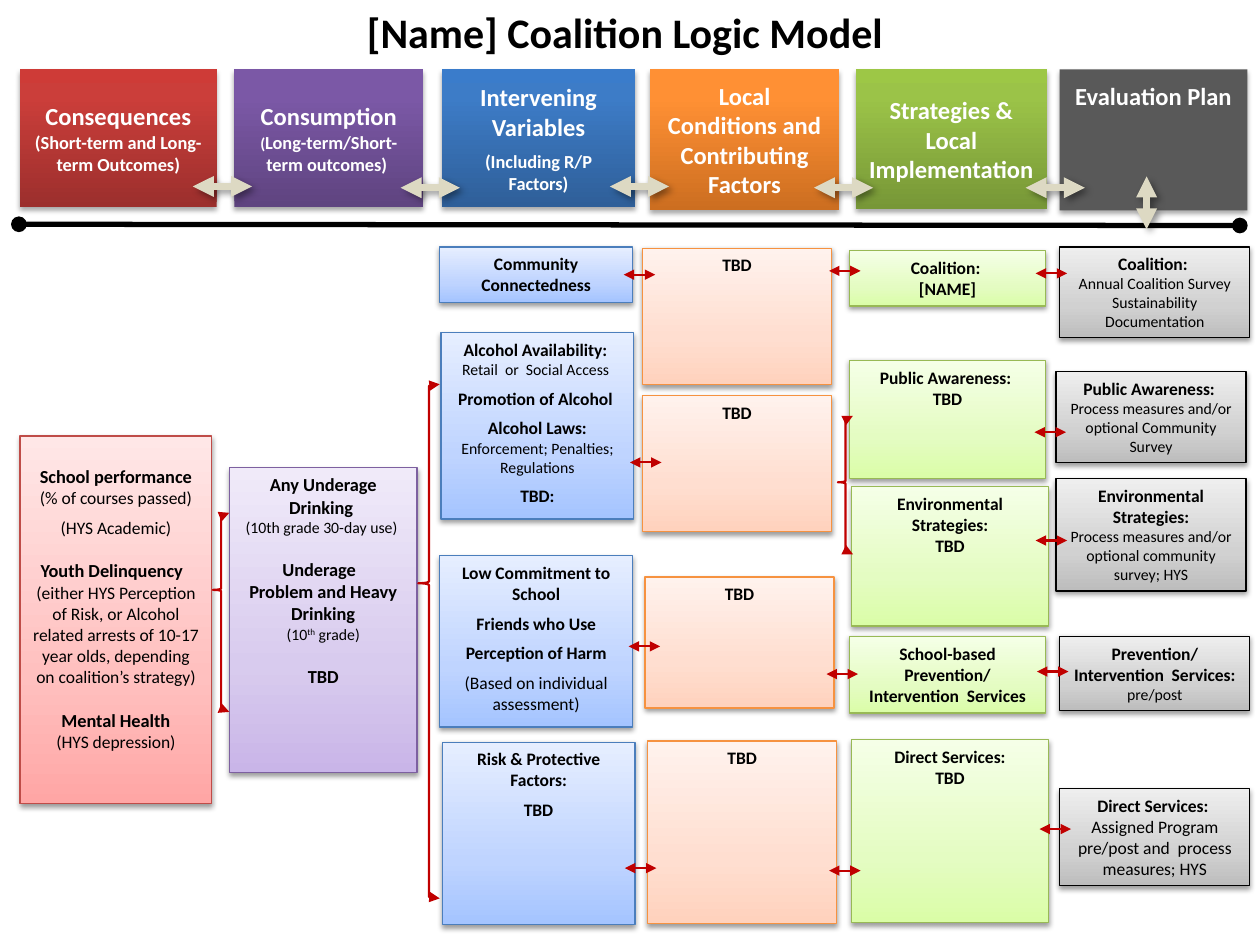
from lxml import etree
from pptx import Presentation
from pptx.dml.color import RGBColor
from pptx.enum.shapes import MSO_CONNECTOR, MSO_SHAPE
from pptx.enum.text import MSO_ANCHOR, PP_ALIGN
from pptx.oxml.ns import qn
from pptx.util import Inches, Pt

RECTANGLE, BRACE = MSO_SHAPE.RECTANGLE, MSO_SHAPE.LEFT_BRACE
STRAIGHT = MSO_CONNECTOR.STRAIGHT
TOP, MIDDLE = MSO_ANCHOR.TOP, MSO_ANCHOR.MIDDLE
CENTER = PP_ALIGN.CENTER
FONT = "Calibri"
RED, SAND = "C00000", "DDD9C3"
SMALL_GAP, BLANK_LINE = 5, 12.5  # points before a paragraph

# Shadows: opacity %, blur pt, distance pt, direction in degrees
HEADER_SHADOW, BOX_SHADOW, ARROW_SHADOW = (35, 3.1, 1.8, 90), (38, 3.1, 1.6, 90), (40, 4, 3, 45)


def bold(text, size=10.0):
    return text, size, True


def plain(text, size=9.0):
    return text, size, False


def para(*runs, gap=0.0):
    return gap, runs


# Headers: left, width, height, gradient colours (bottom to top), paragraphs
HEADERS = [
    (0.16, 1.56, 1.09, ("9C2F2D", "CB3E3A", "CE3B37"),
     [para(bold("Consequences", 14), bold(" ", 11), bold("(Short-term and Long-term Outcomes)", 10.5))]),
    (1.86, 1.5, 1.09, ("5F4480", "7B58A6", "7C57A8"),
     [para(bold("Consumption", 14)), para(bold("(", 9), bold("Long-term/Short-term outcomes) ", 10.5))]),
    (3.51, 1.53, 1.09, ("2F5F99", "3D7CC7", "3A7CCB"),
     [para(bold("Intervening Variables", 14)), para(bold("(Including R/P Factors)", 10.5), gap=SMALL_GAP)]),
    (5.16, 1.5, 1.12, ("CC6E20", "FF9034", "FF9136"),
     [para(bold("Local Conditions and Contributing Factors", 14))]),
    (6.79, 1.52, 1.11, ("779737", "9BC348", "9DC746"),
     [para(bold("Strategies &", 14)), para(bold("Local Implementation", 14))]),
    (8.41, 1.49, 1.12, ("595959",), [para(bold("Evaluation Plan", 14))]),
]
HEADER_TOP = 0.55

TBD = para(bold("TBD"))
# Columns: left, width, gradient, line colour, boxes (shift right, top, height, paragraphs)
COLUMNS = [
    (0.16, 1.52, ("FFA6A5", "FFC0BF", "FFE7E7"), "BF4C48", [
        (0, 3.46, 2.92, [
            para(bold("School performance ", 10.5), plain("(% of courses passed)", 10)),
            para(plain("(HYS Academic)", 10), gap=SMALL_GAP),
            para(bold("Youth Delinquency  ", 10.5), gap=BLANK_LINE),
            para(plain("(either HYS Perception of Risk, or Alcohol related arrests of 10-17 "
                       "year olds, depending on coalition’s strategy)", 10)),
            para(bold("Mental Health", 10.5), gap=BLANK_LINE),
            para(plain("(HYS depression)", 10))])]),
    (1.82, 1.49, ("C9B5E8", "D8CBEE", "F0EAF9"), "7D60A0", [
        (0, 3.71, 2.42, [
            para(bold("Any Underage Drinking ", 10.5)),
            para(plain("(10th grade 30-day use) ")),
            para(bold("Underage  ", 10.5), gap=BLANK_LINE),
            para(bold("Problem and Heavy Drinking", 10.5)),
            para(plain("(10"), plain("th") + ("super",), plain(" grade)")),
            para(bold("TBD", 10.5), gap=BLANK_LINE)])]),
    (3.49, 1.53, ("A4C4FF", "BFD4FF", "E6EEFF"), "4B7EBC", [
        (0, 1.96, 0.44, [para(bold("Community Connectedness"))]),
        (0.01, 2.64, 1.48, [
            para(bold("Alcohol Availability:  "), plain("Retail  or  Social Access ")),
            para(bold("Promotion of Alcohol "), gap=SMALL_GAP),
            para(bold("Alcohol Laws: "), plain("Enforcement; Penalties; Regulations"), gap=SMALL_GAP),
            para(bold("TBD:"), gap=SMALL_GAP)]),
        (0, 4.41, 1.36, [
            para(bold("Low Commitment to School")),
            para(bold("Friends who Use"), gap=SMALL_GAP),
            para(bold("Perception of Harm"), gap=SMALL_GAP),
            para(plain("(Based on individual assessment)", 10), gap=SMALL_GAP)]),
        (0.02, 5.89, 1.45, [para(bold("Risk & Protective Factors:")), para(bold("TBD"), gap=SMALL_GAP)])]),
    (5.1, 1.5, ("FFD2BD", "FFDED0", "FFF2ED"), "F69240", [
        (0, 1.97, 1.08, [TBD]), (0, 3.14, 1.08, [TBD]),
        (0.02, 4.58, 1.04, [TBD]), (0.04, 5.88, 1.45, [TBD])]),
    (6.74, 1.56, ("DAFDA7", "E4FCC2", "F5FFE7"), "98B955", [
        (0, 1.99, 0.44, [para(bold("Coalition: ")), para(bold("[NAME]"))]),
        (0, 2.86, 0.94, [para(bold("Public Awareness: ")), TBD]),
        (0.02, 3.86, 1.11, [para(bold("Environmental Strategies:")), TBD]),
        (0, 5.05, 0.61, [para(bold("School-based Prevention/ Intervention  Services"))]),
        (0.02, 5.87, 1.45, [para(bold("Direct Services:")), TBD])]),
    (8.38, 1.51, ("BDBDBD", "D1D1D1", "EEEEEE"), "000000", [
        (0.03, 1.96, 0.72, [para(bold("Coalition: ")), para(plain("Annual Coalition Survey")),
                            para(plain("Sustainability Documentation"))]),
        (0, 2.95, 0.72, [para(bold("Public Awareness: ")),
                         para(plain("Process measures and/or optional Community Survey"))]),
        (0, 3.8, 0.89, [para(bold("Environmental Strategies:")),
                        para(plain("Process measures and/or optional community survey; HYS"))]),
        (0.03, 5.05, 0.59, [para(bold("Prevention/ Intervention  Services: "), plain("pre/post"))]),
        (0.03, 6.26, 0.77, [para(bold("Direct Services:  "),
                                 plain("Assigned Program pre/post and  process measures; HYS", 10))])]),
]

# Braces: left, top, width, height, position of the point
BRACES = [(1.69, 4.07, 0.13, 1.58, 0.387), (3.32, 3.05, 0.17, 4.08, 0.387), (6.65, 3.3, 0.12, 1.1, 0.48)]

# Double arrows: left end and height
BOX_ARROWS = [(4.95, 2.18), (5, 3.67), (4.99, 5.13), (4.96, 6.89),
              (6.58, 2.15), (6.56, 5.35), (6.58, 6.91),
              (8.22, 2.17), (8.21, 3.43), (8.22, 4.29), (8.23, 5.33), (8.25, 6.58)]
HEADER_ARROWS = [(1.53, 1.48), (3.18, 1.49), (4.84, 1.48), (6.46, 1.49), (8.14, 1.49)]
BOX_ARROW_LENGTH, HEADER_ARROW_LENGTH = 0.25, 0.47


def color(value):
    return RGBColor.from_string(value)


def add_color(parent, value):
    return etree.SubElement(parent, qn("a:srgbClr"), val=value)


def fill_gradient(shape, colors, middle):
    shape.fill.gradient()
    shape.fill.gradient_angle = 90
    stops = shape._element.spPr.find(qn("a:gradFill")).find(qn("a:gsLst"))
    stops.clear()
    for position, value in zip((0, middle, 100), colors):
        add_color(etree.SubElement(stops, qn("a:gs"), pos=str(position * 1000)), value)


def set_shadow(shape, shadow=None):
    properties = shape._element.spPr
    effects = properties.find(qn("a:effectLst"))
    if effects is None:
        effects = etree.SubElement(properties, qn("a:effectLst"))
    if shadow:
        opacity, blur, distance, direction = shadow
        outer = etree.SubElement(effects, qn("a:outerShdw"), blurRad=str(Pt(blur)), dist=str(Pt(distance)),
                                 dir=str(direction * 60000), rotWithShape="0")
        etree.SubElement(add_color(outer, "000000"), qn("a:alpha"), val=str(opacity * 1000))


def set_line(shape, value, width, end):
    shape.line.color.rgb = color(value)
    shape.line.width = Pt(width)
    for tag in ("a:headEnd", "a:tailEnd"):
        etree.SubElement(shape.line._ln, qn(tag), type=end)


def write(shape, paragraphs, value, anchor=TOP):
    frame = shape.text_frame
    frame.word_wrap = True
    frame.vertical_anchor = anchor
    for index, (gap, runs) in enumerate(paragraphs):
        paragraph = frame.paragraphs[0] if index == 0 else frame.add_paragraph()
        paragraph.alignment = CENTER
        paragraph.space_before = Pt(gap)
        paragraph.font.name = FONT
        for text, size, heavy, *raised in runs:
            span = paragraph.add_run()
            span.text = text
            span.font.name, span.font.size, span.font.bold = FONT, Pt(size), heavy
            span.font.color.rgb = color(value)
            if raised:
                span._r.get_or_add_rPr().set("baseline", "30000")


def add_shape(kind, *place):
    shape = slide.shapes.add_shape(kind, *map(Inches, place))
    shape.shadow.inherit = False
    return shape


def add_line(x1, y1, x2, y2, value, width, end="triangle", shadow=None):
    line = slide.shapes.add_connector(STRAIGHT, *map(Inches, (x1, y1, x2, y2)))
    set_line(line, value, width, end)
    set_shadow(line, shadow)


deck = Presentation()
deck.slide_width, deck.slide_height = Inches(10), Inches(7.5)
slide = deck.slides.add_slide(deck.slide_layouts[6])

# Title
title = slide.shapes.add_textbox(*map(Inches, (0.5, 0, 8.92, 0.5)))
write(title, [para(bold("[Name] Coalition Logic Model", 24))], "000000")

# Header row and the line below it
for left, width, height, colors, paragraphs in HEADERS:
    header = add_shape(RECTANGLE, left, HEADER_TOP, width, height)
    header.line.fill.background()
    set_shadow(header, HEADER_SHADOW)
    if len(colors) > 1:
        fill_gradient(header, colors, 80)
        write(header, paragraphs, "FFFFFF", MIDDLE)
    else:
        header.fill.solid()
        header.fill.fore_color.rgb = color(colors[0])
        header.text_frame.margin_top = Inches(0.09)
        write(header, paragraphs, "FFFFFF")
add_line(0.15, 1.78, 9.84, 1.79, "000000", 3, "oval")

# Boxes, column by column
for column, (left, width, colors, outline, boxes) in enumerate(COLUMNS):
    for shift, top, height, paragraphs in boxes:
        box = add_shape(RECTANGLE, left + shift, top, width, height)
        fill_gradient(box, colors, 35)
        box.line.color.rgb = color(outline)
        box.line.width = Pt(0.75)
        set_shadow(box, BOX_SHADOW)
        if column == 0:
            box.text_frame.margin_top = Inches(0.23)
        write(box, paragraphs, "000000")

# Braces and arrows
for *place, point in BRACES:
    brace = add_shape(BRACE, *place)
    brace.adjustments[0], brace.adjustments[1] = 0.083, point
    brace.fill.background()
    set_line(brace, RED, 1.25, "triangle")
for left, y in BOX_ARROWS:
    add_line(left, y, left + BOX_ARROW_LENGTH, y, RED, 1.25)
for left, y in HEADER_ARROWS:
    add_line(left, y, left + HEADER_ARROW_LENGTH, y, SAND, 4, shadow=ARROW_SHADOW)
add_line(9.1, 1.4, 9.1, 1.82, SAND, 4, shadow=ARROW_SHADOW)

deck.save("out.pptx")
